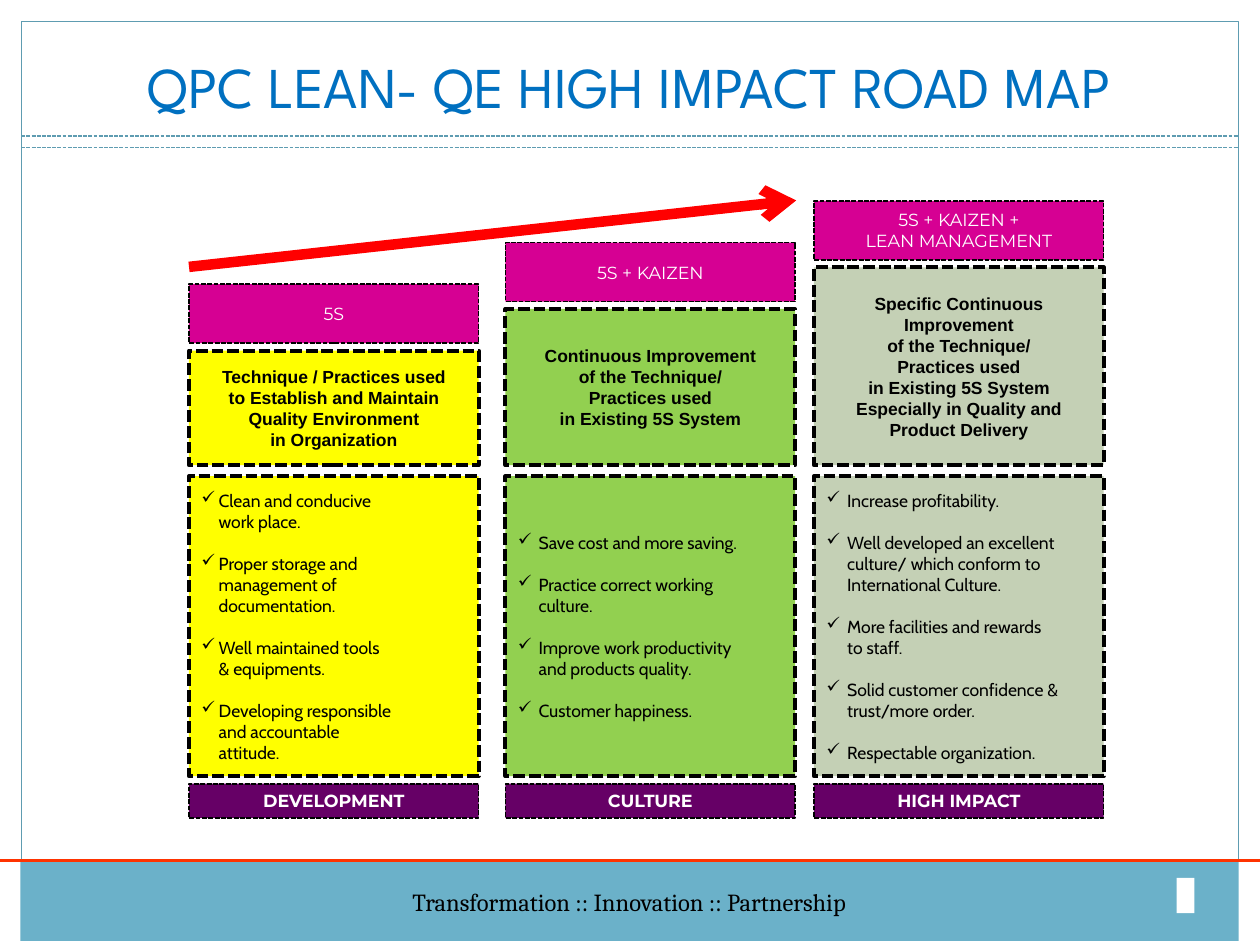
from pptx import Presentation
from pptx.dml.color import RGBColor
from pptx.enum.dml import MSO_LINE_DASH_STYLE as Dash
from pptx.enum.shapes import MSO_CONNECTOR, MSO_SHAPE
from pptx.enum.text import MSO_ANCHOR, MSO_AUTO_SIZE, PP_ALIGN
from pptx.oxml.ns import qn
from pptx.util import Cm, Pt
from lxml.etree import SubElement

BLACK = RGBColor(0x00, 0x00, 0x00)
WHITE = RGBColor(0xFF, 0xFF, 0xFF)
YELLOW = RGBColor(0xFF, 0xFF, 0x00)
GREEN = RGBColor(0x92, 0xD0, 0x50)
SAGE = RGBColor(0xC4, 0xD0, 0xB5)
PINK = RGBColor(0xD6, 0x00, 0x93)
PURPLE = RGBColor(0x66, 0x00, 0x66)
TEAL = RGBColor(0x5E, 0x9C, 0xB1)
FOOTER_BLUE = RGBColor(0x6B, 0xB1, 0xC9)
TITLE_BLUE = RGBColor(0x00, 0x70, 0xC0)
ORANGE = RGBColor(0xFF, 0x33, 0x00)
RED = RGBColor(0xFF, 0x00, 0x00)

TITLE = "QPC LEAN- QE HIGH IMPACT ROAD MAP"
FOOTER = "Transformation :: Innovation :: Partnership"

# Each benefit is a tuple of the lines it is set on.
STAGES = [
    {
        "name": "DEVELOPMENT", "left": 3.81, "color": YELLOW, "indent": 0.35,
        "method": ["5S"],
        "technique": ["Technique / Practices used", "to Establish and Maintain",
                      "Quality Environment", "in Organization"],
        "benefits": [("Clean and conducive", "work place."),
                     ("Proper storage and", "management of", "documentation."),
                     ("Well maintained tools", "& equipments."),
                     ("Developing responsible", "and accountable", "attitude.")],
    },
    {
        "name": "CULTURE", "left": 10.19, "color": GREEN, "indent": 0.42,
        "method": ["5S + KAIZEN"],
        "technique": ["Continuous Improvement", "of the Technique/",
                      "Practices used", "in Existing 5S System"],
        "benefits": [("Save cost and more saving.",),
                     ("Practice correct working", "culture."),
                     ("Improve work productivity", "and products quality."),
                     ("Customer happiness.",)],
    },
    {
        "name": "HIGH IMPACT", "left": 16.41, "color": SAGE, "indent": 0.42,
        "method": ["5S + KAIZEN +", "LEAN MANAGEMENT"],
        "technique": ["Specific Continuous Improvement", "of the Technique/", "Practices used",
                      "in Existing 5S System Especially in Quality and Product Delivery"],
        "benefits": [("Increase profitability.",),
                     ("Well developed an excellent", "culture/ which conform to",
                      "International Culture."),
                     ("More facilities and rewards", "to staff."),
                     ("Solid customer confidence &", "trust/more order."),
                     ("Respectable organization.",)],
    },
]

COLUMN_WIDTH = 5.84
STEP = 0.84  # rise from one stage to the next
METHOD_TOP, METHOD_HEIGHT = 5.73, 1.19
TECHNIQUE_TOP, TECHNIQUE_BOTTOM = 7.07, 9.38
BENEFITS_TOP, BENEFITS_HEIGHT = 9.6, 6.05
NAME_TOP, NAME_HEIGHT = 15.8, 0.69


def add_box(slide, left, top, width, height, fill=None, line=None, weight=0.75, dash=None):
    shape = slide.shapes.add_shape(MSO_SHAPE.RECTANGLE, Cm(left), Cm(top), Cm(width), Cm(height))
    shape.shadow.inherit = False
    if fill is None:
        shape.fill.background()
    else:
        shape.fill.solid()
        shape.fill.fore_color.rgb = fill
    if line is None:
        shape.line.fill.background()
    else:
        shape.line.color.rgb = line
        shape.line.width = Pt(weight)
        shape.line.dash_style = dash
    shape.text_frame.vertical_anchor = MSO_ANCHOR.MIDDLE
    return shape


def add_line(slide, start, end, color, weight, dash=None):
    line = slide.shapes.add_connector(MSO_CONNECTOR.STRAIGHT, *map(Cm, start + end))
    line.line.color.rgb = color
    line.line.width = Pt(weight)
    line.line.dash_style = dash
    SubElement(line._element.spPr, qn("a:effectLst"))
    return line


def add_run(paragraph, text, font, size, color, bold=False):
    run = paragraph.add_run()
    run.text = text
    run.font.name = font
    run.font.size = Pt(size)
    run.font.color.rgb = color
    run.font.bold = bold


def paragraphs_for(frame, items):
    """Yield each item with its own paragraph of the frame."""
    for index, item in enumerate(items):
        yield (frame.add_paragraph() if index else frame.paragraphs[0]), item


def write_centred(shape, lines, font, size, color, bold=False):
    for paragraph, line in paragraphs_for(shape.text_frame, lines):
        paragraph.alignment = PP_ALIGN.CENTER
        add_run(paragraph, line, font, size, color, bold)


def write_checklist(shape, benefits, indent):
    for paragraph, lines in paragraphs_for(shape.text_frame, benefits):
        paragraph.alignment = PP_ALIGN.LEFT
        if lines is not benefits[0]:
            paragraph.space_before = Pt(12)
        properties = paragraph._p.get_or_add_pPr()
        properties.set("marL", str(Cm(indent)))
        properties.set("indent", str(-Cm(indent)))
        SubElement(properties, qn("a:buChar"), char="✓")
        for number, line in enumerate(lines):
            if number:
                paragraph.add_line_break()
            add_run(paragraph, line, "Cabin", 10, BLACK)
        paragraph.font.size = Pt(10)


def add_frame(slide):
    footer = add_box(slide, 0.41, 17.37, 24.56, 1.6, FOOTER_BLUE)
    footer.text_frame.word_wrap = False
    write_centred(footer, [FOOTER], "Cambria", 14, BLACK)
    add_box(slide, 0.43, 0.43, 24.54, 16.94, line=TEAL)
    add_box(slide, 23.72, 17.7, 0.36, 0.71, WHITE)
    for y in (2.74, 2.97):
        add_line(slide, (0.43, y), (24.96, y), TEAL, 0.75, Dash.SQUARE_DOT)
    add_line(slide, (0, 17.35), (25.4, 17.35), ORANGE, 2)


def add_title(slide):
    title = slide.shapes.title
    title.left, title.top, title.width, title.height = Cm(0.84), Cm(0.64), Cm(23.7), Cm(1.9)
    title.text_frame.auto_size = MSO_AUTO_SIZE.NONE
    title.text_frame.vertical_anchor = MSO_ANCHOR.BOTTOM
    write_centred(title, [TITLE], "League Spartan", 33, TITLE_BLUE)


def add_stage(slide, stage, rise):
    def add_part(top, height, fill, weight):
        return add_box(slide, stage["left"], top, COLUMN_WIDTH, height,
                       fill, BLACK, weight, Dash.SQUARE_DOT)

    technique_top = TECHNIQUE_TOP - rise
    technique = add_part(technique_top, TECHNIQUE_BOTTOM - technique_top, stage["color"], 2.25)
    write_centred(technique, stage["technique"], "Arial", 10, BLACK, bold=True)
    benefits = add_part(BENEFITS_TOP, BENEFITS_HEIGHT, stage["color"], 2.25)
    write_checklist(benefits, stage["benefits"], stage["indent"])
    name = add_part(NAME_TOP, NAME_HEIGHT, PURPLE, 0.9)
    write_centred(name, [stage["name"]], "Montserrat", 10, WHITE, bold=True)
    method = add_part(METHOD_TOP - rise, METHOD_HEIGHT, PINK, 0.9)
    write_centred(method, stage["method"], "Montserrat", 10, WHITE)


def main():
    presentation = Presentation()
    presentation.slide_width, presentation.slide_height = Cm(25.4), Cm(19.05)
    slide = presentation.slides.add_slide(presentation.slide_layouts[5])
    add_frame(slide)
    for index, stage in enumerate(STAGES):
        add_stage(slide, stage, index * STEP)
    arrow = add_line(slide, (3.81, 5.38), (16.05, 4.04), RED, 6)
    SubElement(arrow.line._get_or_add_ln(), qn("a:tailEnd"), type="arrow")
    add_title(slide)
    presentation.save("out.pptx")


if __name__ == "__main__":
    main()
